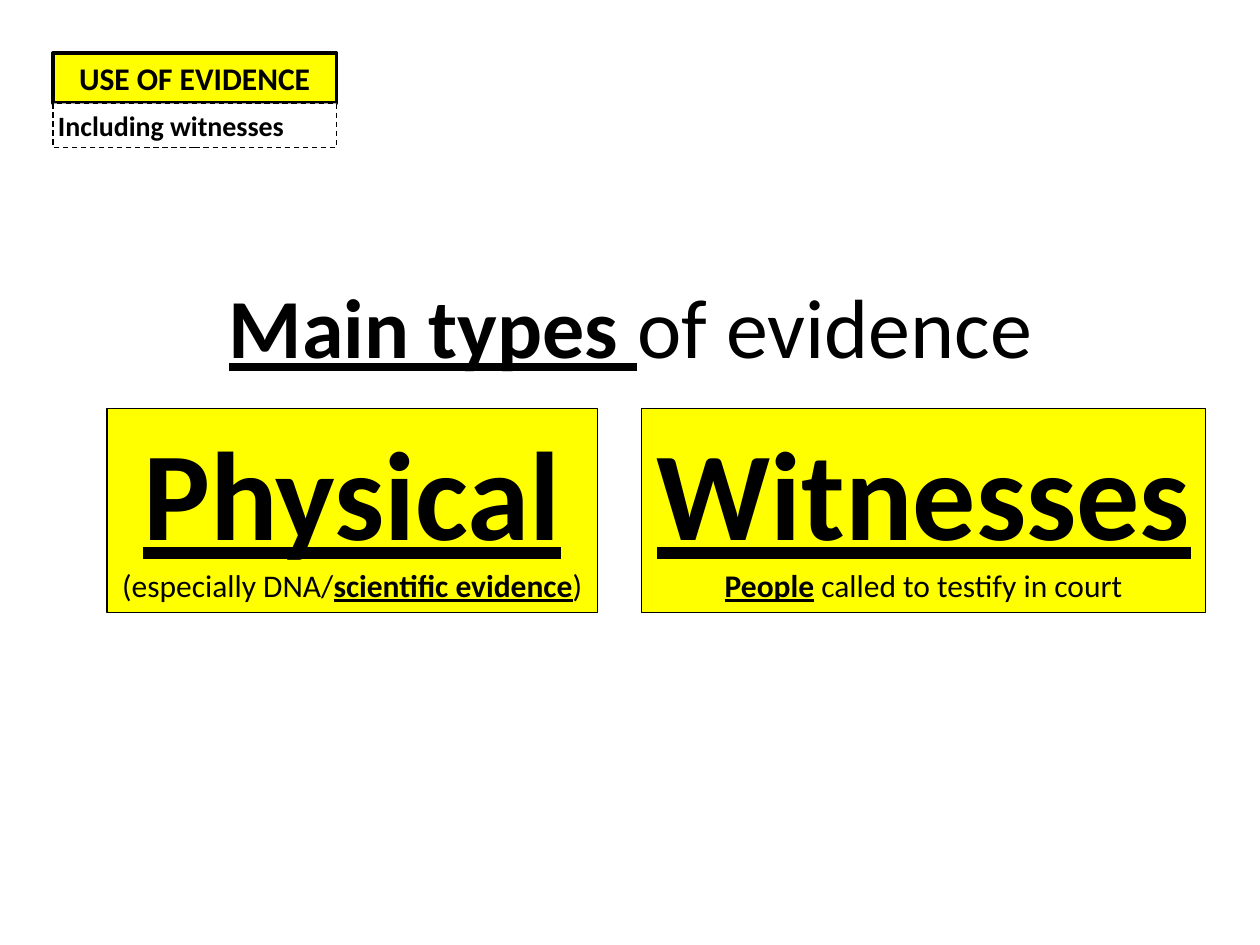
from pptx import Presentation
from pptx.dml.color import RGBColor
from pptx.enum.dml import MSO_LINE
from pptx.enum.shapes import MSO_SHAPE
from pptx.enum.text import MSO_ANCHOR, MSO_AUTO_SIZE, PP_ALIGN
from pptx.util import Inches, Pt

COLORS = {"ink": "000000", "mark": "FFFF00", "paper": "FFFFFF"}
PLAIN, BOLD, STRONG = (False, False), (True, False), (True, True)


def color(name):
    return RGBColor.from_string(COLORS[name])


def write(frame, lines, align=PP_ALIGN.CENTER, wrap=True):
    """Fill a frame; each line is a size and (text, (bold, underline)) runs."""
    frame.word_wrap = wrap
    frame.auto_size = MSO_AUTO_SIZE.SHAPE_TO_FIT_TEXT
    frame.vertical_anchor = MSO_ANCHOR.TOP
    for i, (size, parts) in enumerate(lines):
        para = frame.paragraphs[0] if i == 0 else frame.add_paragraph()
        para.alignment = align
        for text, (bold, under) in parts:
            run = para.add_run()
            run.text = text
            font = run.font
            font.name, font.size = "Calibri", Pt(size)
            font.bold, font.underline = bold, under
            font.color.rgb = color("ink")


def place(shape, left, top, width, height):
    shape.left, shape.top = Inches(left), Inches(top)
    shape.width, shape.height = Inches(width), Inches(height)


def add_title(slide, box, parts):
    title = slide.shapes.title
    place(title, *box)
    write(title.text_frame, [(48, parts)])


def add_box(slide, box, fill, lines, weight=0.75, **style):
    shape = slide.shapes.add_shape(
        MSO_SHAPE.RECTANGLE, *[Inches(n) for n in box])
    shape.shadow.inherit = False
    shape.fill.solid()
    shape.fill.fore_color.rgb = color(fill)
    shape.line.color.rgb = color("ink")
    shape.line.width = Pt(weight)
    write(shape.text_frame, lines, **style)
    return shape


def add_note(slide, box, text):
    """Add a dashed box with narrow margins."""
    note = add_box(slide, box, "paper", [(16, [(text, BOLD)])],
                   align=PP_ALIGN.LEFT)
    note.line.dash_style = MSO_LINE.DASH
    frame = note.text_frame
    frame.margin_left = frame.margin_right = Inches(0.04)
    frame.margin_top = frame.margin_bottom = Inches(0.04)


def add_type(slide, left, width, name, detail):
    """Add a box for one type of evidence."""
    add_box(slide, (left, 3.24, width, 1.62), "mark",
            [(72, [(name, STRONG)]), (18, detail)], wrap=False)


def main():
    deck = Presentation()
    deck.slide_width, deck.slide_height = Inches(10), Inches(7.5)
    slide = deck.slides.add_slide(deck.slide_layouts[5])

    add_box(slide, (0.42, 0.42, 2.25, 0.4), "mark",
            [(18, [("USE OF EVIDENCE", BOLD)])], weight=2)
    add_note(slide, (0.42, 0.82, 2.25, 0.35), "Including witnesses")
    add_title(slide, (0.01, 2.13, 9.99, 0.91),
              [("Main types ", STRONG), ("of evidence", PLAIN)])
    add_type(slide, 0.85, 3.89, "Physical",
             [("(especially DNA/", PLAIN), ("scientific evidence", STRONG),
              (")", PLAIN)])
    add_type(slide, 5.09, 4.48, "Witnesses",
             [("People", STRONG), (" called to testify in court", PLAIN)])
    deck.save("out.pptx")


if __name__ == "__main__":
    main()
